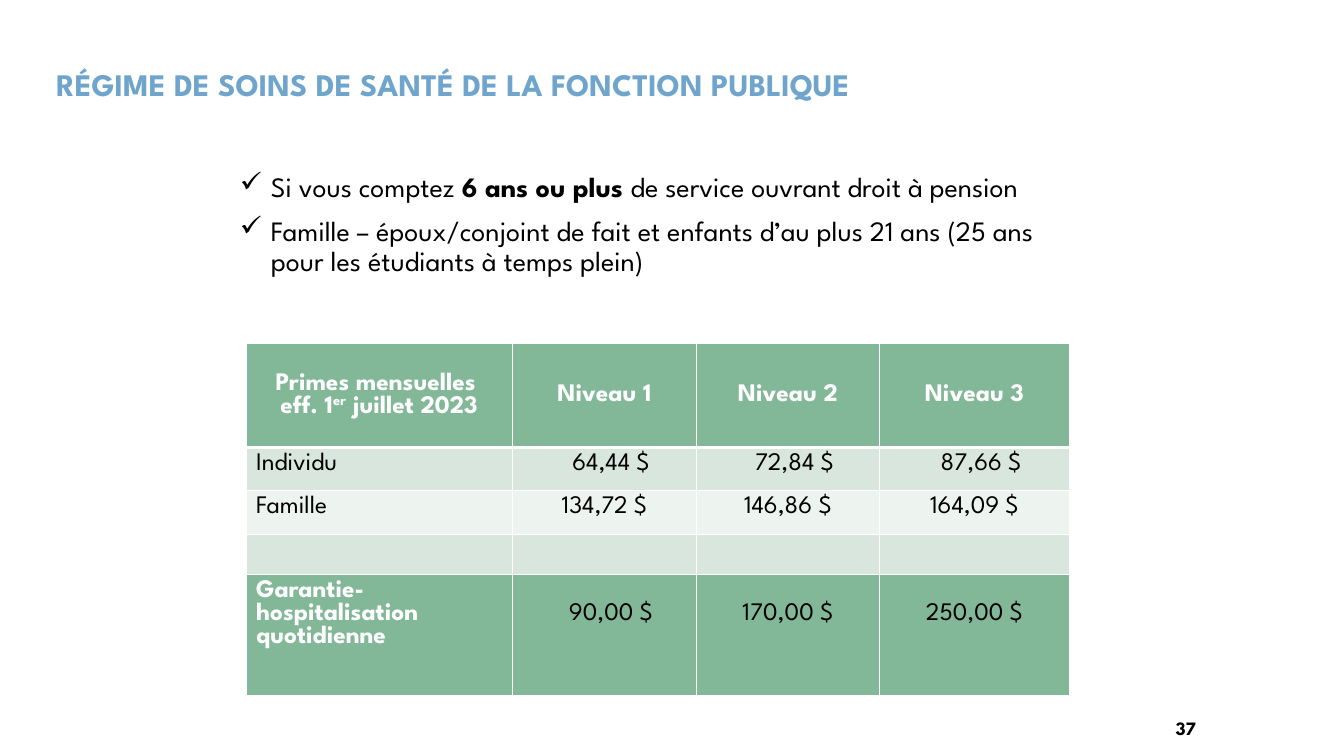
import pptx
import pptx.util
import pptx.dml.color
import pptx.enum.text
import lxml.etree
from pptx.oxml.ns import qn

Inches = pptx.util.Inches
Pt = pptx.util.Pt
ALIGN = pptx.enum.text.PP_ALIGN
ANCHOR = pptx.enum.text.MSO_ANCHOR

FONT = "League Spartan"
WHITE = pptx.dml.color.RGBColor(0xFF, 0xFF, 0xFF)
BLACK = pptx.dml.color.RGBColor(0x00, 0x00, 0x00)
BLUE = pptx.dml.color.RGBColor(0x6F, 0xA5, 0xCD)
GREEN = pptx.dml.color.RGBColor(0x82, 0xB8, 0x98)
LIGHT_GREEN = pptx.dml.color.RGBColor(0xD8, 0xE6, 0xDD)
PALE_GREEN = pptx.dml.color.RGBColor(0xED, 0xF3, 0xEF)

BULLETS = [
    [("Si vous comptez ", False), ("6 ans ou plus ", True),
     ("de service ouvrant droit à pension", False)],
    [("Famille – époux/conjoint de fait et enfants d’au plus 21 ans "
      "(25 ans pour les étudiants à temps plein)", False)],
]
COLUMN_WIDTHS = [2.64, 1.83, 1.81, 1.89]
ROW_HEIGHTS = [1.03, 0.43, 0.43, 0.34, 1.2]
ROW_FILLS = [GREEN, LIGHT_GREEN, PALE_GREEN, LIGHT_GREEN, GREEN]
PREMIUMS = [
    ["Primes mensuelles \neff. 1er juillet 2023", "Niveau 1", "Niveau 2", "Niveau 3"],
    ["Individu", "64,44 $", "72,84 $", "87,66 $"],
    ["Famille", "134,72 $", "146,86 $", "164,09 $"],
    ["", "", "", ""],
    ["Garantie-hospitalisation quotidienne", "90,00 $", "170,00 $", "250,00 $"],
]


def style(paragraph, size, color, bold=None, align=ALIGN.LEFT):
    paragraph.alignment = align
    font = paragraph.font
    font.name, font.size, font.bold = FONT, Pt(size), bold
    font.color.rgb = color


def add_title(slide, text):
    title = slide.shapes.title
    title.left, title.top = Inches(0.46), Inches(0.63)
    title.width, title.height = Inches(8.82), Inches(0.4)
    title.fill.solid()
    title.fill.fore_color.rgb = WHITE
    title.text_frame.vertical_anchor = ANCHOR.MIDDLE
    paragraph = title.text_frame.paragraphs[0]
    run = paragraph.add_run()
    run.text = text
    run.font._element.set("cap", "small")
    paragraph.line_spacing = 0.9
    style(paragraph, 28, BLUE, True)


def add_text_frame(slide, left, top, width, height):
    box = slide.shapes.add_textbox(Inches(left), Inches(top), Inches(width), Inches(height))
    box.text_frame.word_wrap = True
    return box.text_frame


def add_check_list(slide, items):
    frame = add_text_frame(slide, 2.28, 1.67, 8.34, 1.64)
    for index, pieces in enumerate(items):
        paragraph = frame.paragraphs[0] if index == 0 else frame.add_paragraph()
        paragraph.line_spacing = 0.9
        paragraph.space_before = Pt(10 if index else 0)
        properties = paragraph._p.get_or_add_pPr()
        properties.set("marL", str(Inches(0.31)))
        properties.set("indent", str(-Inches(0.31)))
        lxml.etree.SubElement(properties, qn("a:buChar")).set("char", "✓")
        style(paragraph, 20, BLACK)
        for text, bold in pieces:
            run = paragraph.add_run()
            run.text = text
            run.font.bold = bold


def set_borders(cell, bottom_width):
    properties = cell._tc.get_or_add_tcPr()
    widths = {"a:lnL": 1, "a:lnR": 1, "a:lnT": 1, "a:lnB": bottom_width}
    for index, (tag, width) in enumerate(widths.items()):
        line = lxml.etree.Element(qn(tag), w=str(Pt(width)))
        fill = lxml.etree.SubElement(line, qn("a:solidFill"))
        lxml.etree.SubElement(fill, qn("a:srgbClr")).set("val", str(WHITE))
        properties.insert(index, line)


def fill_paragraph(paragraph, text):
    """Write the text, raising the ordinal ending of the date."""
    before, ordinal, after = text.partition("er juillet")
    pieces = [(before, 0), ("er", 30000), (" juillet" + after, 0)] if ordinal else [(text, 0)]
    for piece, baseline in pieces:
        run = paragraph.add_run()
        run.text = piece
        if baseline:
            run.font._element.set("baseline", str(baseline))


def add_premium_table(slide):
    table = slide.shapes.add_table(
        len(PREMIUMS), len(COLUMN_WIDTHS), Inches(2.44), Inches(3.41),
        Inches(sum(COLUMN_WIDTHS)), Inches(sum(ROW_HEIGHTS))).table
    for column, width in zip(table.columns, COLUMN_WIDTHS):
        column.width = Inches(width)
    last_row = len(PREMIUMS) - 1
    for row, texts in enumerate(PREMIUMS):
        table.rows[row].height = Inches(ROW_HEIGHTS[row])
        for column, text in enumerate(texts):
            cell = table.cell(row, column)
            cell.fill.solid()
            cell.fill.fore_color.rgb = ROW_FILLS[row]
            set_borders(cell, 3 if row == 0 else 1)
            cell.vertical_anchor = ANCHOR.MIDDLE if row == 0 else ANCHOR.TOP
            heading = row == 0 or (row == last_row and column == 0)
            # Short amounts sit a little to the right, the last row lower
            if column and len(text) == len("64,44 $"):
                cell.margin_left = Inches(0.23)
            if column and row == last_row:
                cell.margin_top = Inches(0.28)
            frame = cell.text_frame
            for index, line in enumerate(text.split("\n")):
                paragraph = frame.paragraphs[0] if index == 0 else frame.add_paragraph()
                if line:
                    fill_paragraph(paragraph, line)
                align = ALIGN.CENTER if row == 0 or column else ALIGN.LEFT
                style(paragraph, 18, WHITE if heading else BLACK, heading, align)


def add_page_number(slide, number):
    paragraph = add_text_frame(slide, 9.71, 7.06, 2.25, 0.3).paragraphs[0]
    paragraph.text = number
    style(paragraph, 13.5, BLACK, True, ALIGN.RIGHT)


def main():
    presentation = pptx.Presentation()
    presentation.slide_width, presentation.slide_height = Inches(13.33), Inches(7.5)
    slide = presentation.slides.add_slide(presentation.slide_layouts[5])
    add_title(slide, "régime de soins de santé de la fonction publique")
    add_check_list(slide, BULLETS)
    add_premium_table(slide)
    add_page_number(slide, "37")
    presentation.save("out.pptx")


if __name__ == "__main__":
    main()
